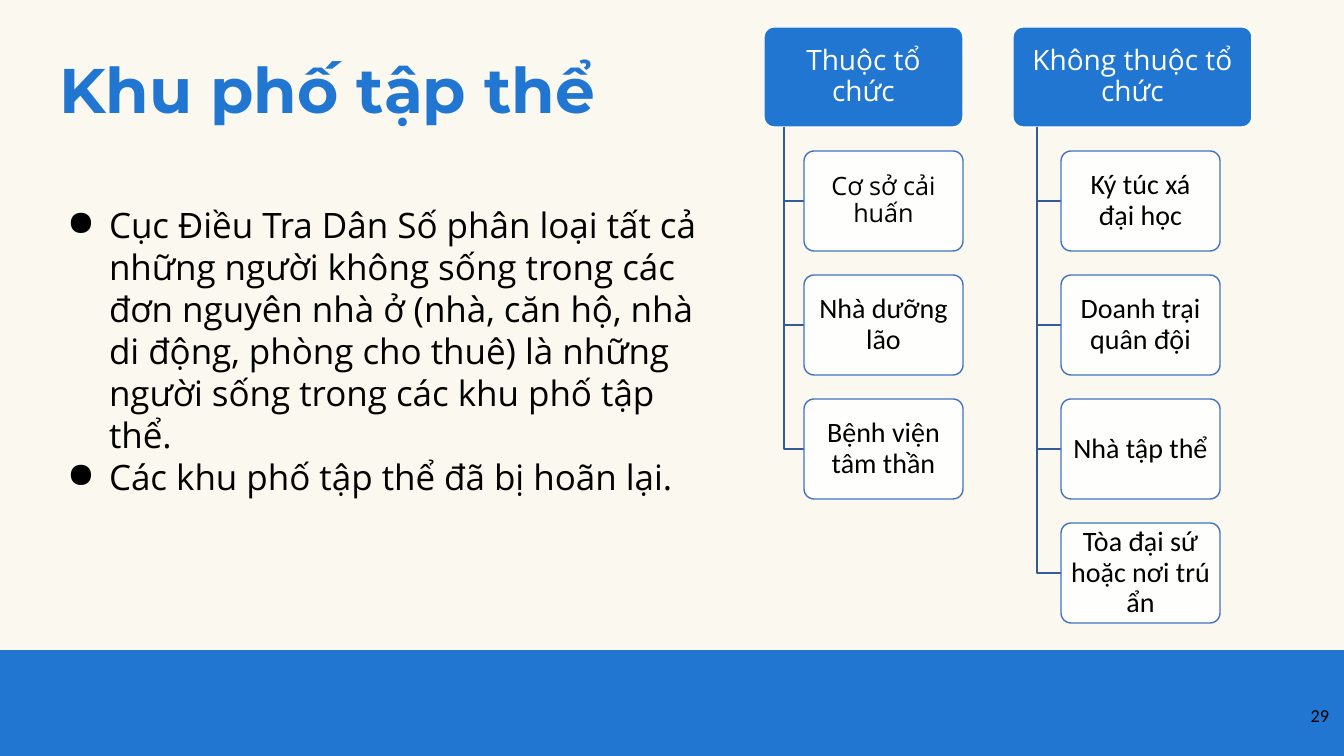
from dataclasses import dataclass

from lxml import etree
from pptx import Presentation
from pptx import util as u
from pptx.dml.color import RGBColor
from pptx.enum import shapes, text
from pptx.oxml.ns import qn

SCALE = 914400 / 100.8
LEFT, MID, RIGHT = text.PP_ALIGN.LEFT, text.PP_ALIGN.CENTER, text.PP_ALIGN.RIGHT


@dataclass(frozen=True)
class Theme:
    paper: str = "FBF9EF"
    blue: str = "2176D2"
    white: str = "FFFFFF"
    black: str = "000000"
    edge: str = "4372C3"
    link: str = "345A99"
    head: str = "Montserrat"
    body: str = "Open Sans"
    plain: str = "Calibri"
    title: int = 45
    list: int = 25
    node: int = 20
    small: int = 18
    page: int = 13


T = Theme()

GROUPS = [
    ((764, 27, 199, 100), "Thuộc tổ chức", [
        ("Cơ sở cải huấn", T.body, T.small),
        ("Nhà dưỡng lão", T.plain, T.node),
        ("Bệnh viện tâm thần", T.plain, T.node),
    ]),
    ((1013, 27, 239, 100), "Không thuộc tổ chức", [
        ("Ký túc xá đại học", T.plain, T.node),
        ("Doanh trại quân đội", T.plain, T.node),
        ("Nhà tập thể", T.plain, T.node),
        ("Tòa đại sứ hoặc nơi trú ẩn", T.plain, T.node),
    ]),
]
POINTS = [
    "Cục Điều Tra Dân Số phân loại tất cả những người không sống trong các "
    "đơn nguyên nhà ở (nhà, căn hộ, nhà di động, phòng cho thuê) là những "
    "người sống trong các khu phố tập thể.",
    "Các khu phố tập thể đã bị hoãn lại.",
]


def px(n):
    return u.Emu(round(n * SCALE))


def rgb(code):
    return RGBColor.from_string(code)


def place(item, box):
    item.left, item.top, item.width, item.height = map(px, box)


def frame(shape, pad=(10, 5), anchor=text.MSO_ANCHOR.TOP):
    """Set wrapping, insets and anchor of a shape's text."""
    tf = shape.text_frame
    tf.word_wrap = True
    tf.auto_size = text.MSO_AUTO_SIZE.NONE
    tf.vertical_anchor = anchor
    tf.margin_left = tf.margin_right = px(pad[0])
    tf.margin_top = tf.margin_bottom = px(pad[1])
    return tf


def write(par, words, font, size, color, align=LEFT, bold=False):
    par.alignment = align
    run = par.add_run()
    run.text = words
    run.font.name = font
    run.font.size = u.Pt(size)
    run.font.bold = bold
    run.font.color.rgb = rgb(color)


def bullet(par):
    props = par._p.get_or_add_pPr()
    props.set("marL", str(px(50)))
    props.set("indent", str(px(-42)))
    tint = etree.SubElement(props, qn("a:buClr"))
    etree.SubElement(tint, qn("a:srgbClr"), val=T.black)
    etree.SubElement(props, qn("a:buChar"), char="●")


def title(slide, box):
    shape = slide.shapes.title
    place(shape, box)
    par = frame(shape).paragraphs[0]
    write(par, "Khu phố tập thể", T.head, T.title, T.blue, bold=True)


def points(slide, box):
    tf = frame(slide.shapes.add_textbox(*map(px, box)))
    for i, words in enumerate(POINTS):
        par = tf.add_paragraph() if i else tf.paragraphs[0]
        bullet(par)
        write(par, words, T.body, T.list, T.black)


def node(slide, box, words, font, size, ink, fill, edge, alpha=100):
    shape = slide.shapes.add_shape(
        shapes.MSO_SHAPE.ROUNDED_RECTANGLE, *map(px, box))
    shape.shadow.inherit = False
    shape.adjustments[0] = 0.1
    shape.fill.solid()
    shape.fill.fore_color.rgb = rgb(fill)
    if alpha < 100:
        color = shape.fill._xPr.find(".//" + qn("a:srgbClr"))
        etree.SubElement(color, qn("a:alpha"), val=str(alpha * 1000))
    shape.line.color.rgb = rgb(edge)
    shape.line.width = u.Pt(1)
    par = frame(shape, (7, 5), text.MSO_ANCHOR.MIDDLE).paragraphs[0]
    par.line_spacing = 0.9
    write(par, words, font, size, ink, MID)


def elbow(slide, x, y, right, down):
    path = slide.shapes.build_freeform(x, y, scale=SCALE)
    path.add_line_segments([(x, down), (right, down)], close=False)
    shape = path.convert_to_shape()
    shape.shadow.inherit = False
    shape.fill.background()
    shape.line.color.rgb = rgb(T.link)
    shape.line.width = u.Pt(1)


def group(slide, box, head, kids):
    """Draw a header with its children hung below it."""
    x, y, w, h = box
    step = h + 24
    indent = round(w / 10)
    trunk, left = x + indent, x + 2 * indent
    node(slide, box, head, T.body, T.node, T.white, T.blue, T.white)
    for i, (words, font, size) in enumerate(kids, 1):
        top = y + i * step
        elbow(slide, trunk, y + h, left, top + h // 2)
        node(slide, (left, top, 159, h), words, font, size,
             T.black, T.white, T.edge, alpha=89)


def band(slide, box):
    shape = slide.shapes.add_shape(shapes.MSO_SHAPE.RECTANGLE, *map(px, box))
    shape.shadow.inherit = False
    shape.fill.solid()
    shape.fill.fore_color.rgb = rgb(T.blue)
    shape.line.fill.background()


def page(slide, box):
    tf = frame(slide.shapes.add_textbox(*map(px, box)))
    write(tf.paragraphs[0], "29", T.plain, T.page, T.black, RIGHT)


def main():
    deck = Presentation()
    deck.slide_width, deck.slide_height = px(1344), px(756)
    slide = deck.slides.add_slide(deck.slide_layouts.get_by_name("Title Only"))
    slide.background.fill.solid()
    slide.background.fill.fore_color.rgb = rgb(T.paper)
    band(slide, (0, 650, 1344, 106))
    title(slide, (49, 45, 1038, 87))
    for box, head, kids in GROUPS:
        group(slide, box, head, kids)
    points(slide, (49, 199, 675, 432))
    page(slide, (1258, 699, 81, 57))
    deck.save("out.pptx")


if __name__ == "__main__":
    main()
